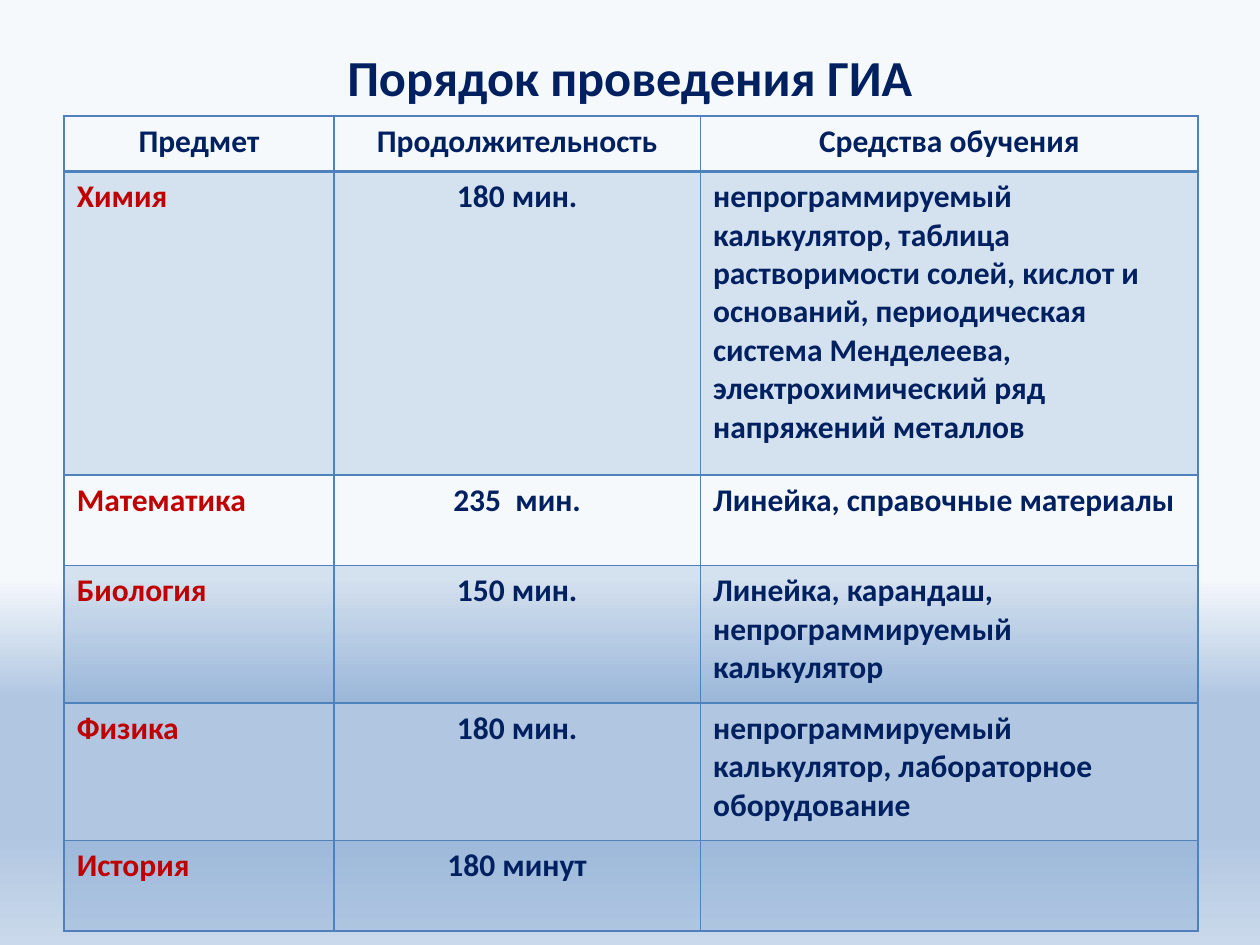
from dataclasses import dataclass

import pptx
import pptx.dml.color
import pptx.enum.text
import pptx.oxml
import pptx.oxml.ns
import pptx.util
from lxml import etree
from pptx.util import Inches


@dataclass(frozen=True)
class Theme:
    font: str = "Calibri"
    navy: str = "002060"
    red: str = "C00000"
    blue: str = "4F81BD"
    band_opacity: int = 20
    title_size: float = 28.8
    cell_size: float = 18
    line: float = 1
    header_line: float = 2
    sky: tuple = ((61, "F6F9FC"), (74, "B0C6E1"), (88, "B0C6E1"), (100, "CAD9EB"))


THEME = Theme()
ALIGN = pptx.enum.text.PP_ALIGN
TITLE = "Порядок проведения ГИА"
COLUMN_WIDTHS = (2.14, 2.91, 3.95)
ROW_HEIGHTS = (0.44, 2.41, 0.72, 1.09, 1.09, 0.72)
ROWS = (
    ("Предмет", "Продолжительность", "Средства обучения"),
    ("Химия", "180 мин.",
     "непрограммируемый калькулятор, таблица растворимости солей, кислот и "
     "оснований, периодическая система Менделеева, электрохимический ряд "
     "напряжений металлов"),
    ("Математика", "235  мин.", "Линейка, справочные материалы"),
    ("Биология", "150 мин.", "Линейка, карандаш, непрограммируемый калькулятор"),
    ("Физика", "180 мин.",
     "непрограммируемый калькулятор, лабораторное оборудование"),
    ("История", "180 минут", ""),
)


def add_node(parent, tag, **attributes):
    node = etree.SubElement(parent, pptx.oxml.ns.qn(tag))
    for name, value in attributes.items():
        node.set(name, str(value))
    return node


def paint_background(page):
    fill = page.background.fill
    fill.gradient()
    fill.gradient_angle = 270
    stops = page.element.xpath(".//a:gsLst")[0]
    for stop in list(stops):
        stops.remove(stop)
    for percent, color in THEME.sky:
        stop = add_node(stops, "a:gs", pos=percent * 1000)
        add_node(stop, "a:srgbClr", val=color)


def write_text(frame, text, size, color, align):
    para = frame.paragraphs[0]
    para.alignment = align
    if not text:
        para.font.size = pptx.util.Pt(size)
        return
    span = para.add_run()
    span.text = text
    span.font.name = THEME.font
    span.font.size = pptx.util.Pt(size)
    span.font.bold = True
    span.font.color.rgb = pptx.dml.color.RGBColor.from_string(color)


def place_title(page):
    box = page.shapes.title
    box.left, box.top = Inches(0.5), Inches(0.3)
    box.width, box.height = Inches(9), Inches(0.61)
    frame = box.text_frame
    frame.auto_size = pptx.enum.text.MSO_AUTO_SIZE.NONE
    frame.vertical_anchor = pptx.enum.text.MSO_ANCHOR.MIDDLE
    write_text(frame, TITLE, THEME.title_size, THEME.navy, ALIGN.CENTER)


def draw_borders(cell, top, bottom):
    properties = cell._tc.get_or_add_tcPr()
    sides = (("L", THEME.line), ("R", THEME.line), ("T", top), ("B", bottom))
    for side, width in sides:
        line = add_node(properties, f"a:ln{side}", w=pptx.util.Pt(width))
        fill = add_node(line, "a:solidFill")
        add_node(fill, "a:srgbClr", val=THEME.blue)


def fill_cell(cell, banded):
    if not banded:
        cell.fill.background()
        return
    cell.fill.solid()
    cell.fill.fore_color.rgb = pptx.dml.color.RGBColor.from_string(THEME.blue)
    color = cell._tc.tcPr.xpath("./a:solidFill/a:srgbClr")[0]
    add_node(color, "a:alpha", val=THEME.band_opacity * 1000)


def format_cell(cell, text, row, column):
    is_header = row == 0
    color = THEME.red if column == 0 and not is_header else THEME.navy
    align = ALIGN.CENTER if is_header or column == 1 else ALIGN.LEFT
    write_text(cell.text_frame, text, THEME.cell_size, color, align)
    draw_borders(
        cell,
        top=THEME.header_line if row == 1 else THEME.line,
        bottom=THEME.header_line if is_header else THEME.line,
    )
    fill_cell(cell, banded=row % 2 == 1)


def add_schedule(page):
    table = page.shapes.add_table(
        len(ROWS), len(COLUMN_WIDTHS), Inches(0.51), Inches(0.92),
        Inches(sum(COLUMN_WIDTHS)), Inches(sum(ROW_HEIGHTS)),
    ).table
    table.first_row = False
    table.horz_banding = False
    for column, width in zip(table.columns, COLUMN_WIDTHS):
        column.width = Inches(width)
    for row, height in zip(table.rows, ROW_HEIGHTS):
        row.height = Inches(height)
    for row, texts in enumerate(ROWS):
        for column, text in enumerate(texts):
            format_cell(table.cell(row, column), text, row, column)


def main():
    deck = pptx.Presentation()
    deck.slide_width, deck.slide_height = Inches(10), Inches(7.5)
    page = deck.slides.add_slide(deck.slide_layouts.get_by_name("Title Only"))
    paint_background(page)
    place_title(page)
    add_schedule(page)
    deck.save("out.pptx")


if __name__ == "__main__":
    main()
